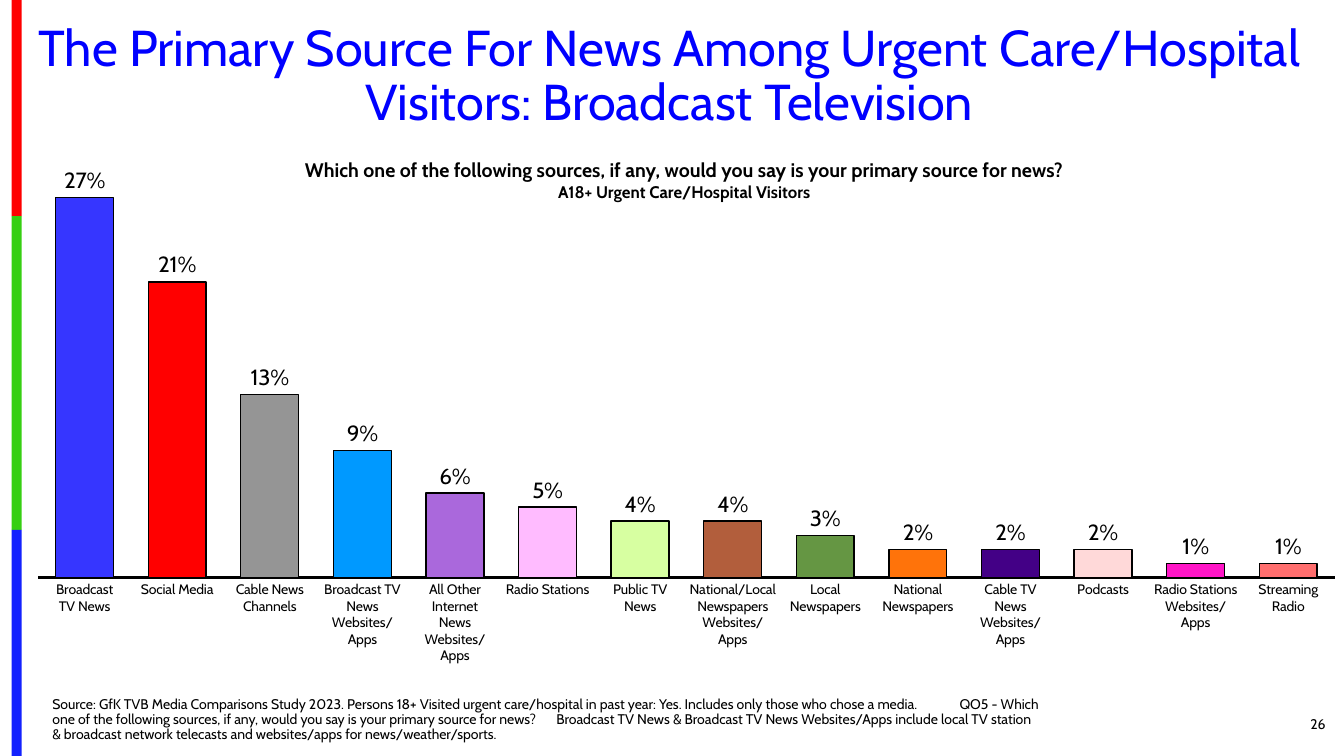
from lxml import etree
from pptx import Presentation
from pptx import util as u
from pptx.chart.data import CategoryChartData
from pptx.dml.color import RGBColor
from pptx.enum import chart as charts, shapes, text
from pptx.oxml import parse_xml
from pptx.oxml import ns

Pt = u.Pt
BLACK = RGBColor(0x00, 0x00, 0x00)
TITLE_BLUE = RGBColor(0x00, 0x00, 0xFF)
STRIPE_RED = RGBColor(0xFE, 0x00, 0x00)
STRIPE_GREEN = RGBColor(0x36, 0xCF, 0x12)
STRIPE_BLUE = RGBColor(0x13, 0x22, 0xFE)

# Category, share, bar colour
SOURCES = [
    ("Broadcast\nTV News", 0.27, RGBColor(0x36, 0x36, 0xFF)),
    ("Social Media", 0.21, RGBColor(0xFF, 0x00, 0x00)),
    ("Cable News Channels", 0.13, RGBColor(0x95, 0x95, 0x95)),
    ("Broadcast TV News Websites/Apps", 0.09, RGBColor(0x00, 0x99, 0xFF)),
    ("All Other Internet\nNews\nWebsites/Apps", 0.06, RGBColor(0xAA, 0x68, 0xDC)),
    ("Radio Stations", 0.05, RGBColor(0xFF, 0xBB, 0xFF)),
    ("Public TV News", 0.04, RGBColor(0xD7, 0xFF, 0xA1)),
    ("National/Local Newspapers Websites/Apps", 0.04, RGBColor(0xB2, 0x5E, 0x3C)),
    ("Local Newspapers", 0.03, RGBColor(0x65, 0x96, 0x43)),
    ("National Newspapers", 0.02, RGBColor(0xFF, 0x73, 0x0A)),
    ("Cable TV\nNews\nWebsites/Apps", 0.02, RGBColor(0x43, 0x00, 0x86)),
    ("Podcasts", 0.02, RGBColor(0xFF, 0xD9, 0xD9)),
    ("Radio Stations Websites/Apps", 0.01, RGBColor(0xFF, 0x15, 0xC7)),
    ("Streaming Radio", 0.01, RGBColor(0xFF, 0x6E, 0x6E)),
]


def set_font(font, size, color=BLACK, bold=False):
    font.name = "Cabin"
    font.size = Pt(size)
    font.bold = bold
    font.color.rgb = color


def write(paragraph, words, size, color=BLACK, bold=False,
          align=text.PP_ALIGN.LEFT, line_spacing=1.0, tabs=()):
    """Fill a paragraph without bullet; tabs are stops in points."""
    properties = paragraph._p.get_or_add_pPr()
    properties.set("marL", "0")
    properties.set("indent", "0")
    paragraph.alignment = align
    paragraph.line_spacing = line_spacing
    paragraph.space_before = paragraph.space_after = Pt(0)
    etree.SubElement(properties, ns.qn("a:buNone"))
    if tabs:
        stops = etree.SubElement(properties, ns.qn("a:tabLst"))
        for stop in tabs:
            etree.SubElement(stops, ns.qn("a:tab"), pos=str(Pt(stop)), algn="l")
    run = paragraph.add_run()
    run.text = words
    set_font(run.font, size, color, bold)


class SlideBuilder:
    def __init__(self, slide):
        self.slide = slide

    def stripe(self, left, top, width, height, color):
        shape = self.slide.shapes.add_shape(
            shapes.MSO_SHAPE.RECTANGLE, Pt(left), Pt(top), Pt(width), Pt(height))
        shape.shadow.inherit = False
        shape.fill.solid()
        shape.fill.fore_color.rgb = color
        shape.line.fill.background()

    def frame(self, shape, anchor):
        frame = shape.text_frame
        frame.word_wrap = True
        frame.auto_size = text.MSO_AUTO_SIZE.NONE
        frame.vertical_anchor = anchor
        return frame

    def placeholder(self, index, box, words, anchor, **style):
        shape = self.slide.placeholders[index]
        shape.left, shape.top, shape.width, shape.height = map(Pt, box)
        write(self.frame(shape, anchor).paragraphs[0], words, **style)

    def text_box(self, box, lines, anchor=text.MSO_ANCHOR.TOP):
        """Add a text box; lines holds (words, style) pairs."""
        frame = self.frame(self.slide.shapes.add_textbox(*map(Pt, box)), anchor)
        for number, (words, style) in enumerate(lines):
            paragraph = frame.add_paragraph() if number else frame.paragraphs[0]
            write(paragraph, words, **style)

    def column_chart(self, box, rows, plot):
        """Add columns coloured one by one; plot holds x, y, w, h shares."""
        names, values, colors = zip(*rows)
        data = CategoryChartData(number_format="0%")
        data.categories = names
        data.add_series("Series 1", values)
        chart = self.slide.shapes.add_chart(
            charts.XL_CHART_TYPE.COLUMN_CLUSTERED, *map(Pt, box), data).chart
        set_font(chart.font, 10)
        chart.has_legend = chart.has_title = False

        axis = chart.category_axis
        axis.major_tick_mark = axis.minor_tick_mark = charts.XL_TICK_MARK.NONE
        axis.format.line.color.rgb = BLACK
        axis.format.line.width = Pt(1.5)
        set_font(axis.tick_labels.font, 10)
        values_axis = chart.value_axis
        values_axis.minimum_scale, values_axis.maximum_scale = 0, 0.3
        values_axis.has_major_gridlines = False
        values_axis.visible = False

        columns = chart.plots[0]
        columns.gap_width = 60
        columns.vary_by_categories = False
        columns.has_data_labels = True
        labels = columns.data_labels
        labels.show_value = True
        labels.number_format, labels.number_format_is_linked = "0%", False
        labels.position = charts.XL_LABEL_POSITION.OUTSIDE_END
        set_font(labels.font, 16)
        for number, color in enumerate(colors):
            bar = columns.series[0].points[number].format
            bar.fill.solid()
            bar.fill.fore_color.rgb = color
            bar.line.color.rgb = BLACK
            bar.line.width = Pt(1)
        self.place_plot(chart, plot)

    def place_plot(self, chart, plot):
        area = chart._chartSpace.chart.plotArea
        for layout in area.findall(ns.qn("c:layout")):
            area.remove(layout)
        sizes = "".join(f'<c:{key} val="{share}"/>' for key, share in zip("xywh", plot))
        area.insert(0, parse_xml(
            f'<c:layout {ns.nsdecls("c")}><c:manualLayout><c:layoutTarget val="inner"/>'
            f'<c:xMode val="edge"/><c:yMode val="edge"/>{sizes}'
            '</c:manualLayout></c:layout>'))


def main():
    presentation = Presentation()
    presentation.slide_width, presentation.slide_height = Pt(960), Pt(540)
    slide = presentation.slides.add_slide(presentation.slide_layouts[1])
    builder = SlideBuilder(slide)
    center = text.PP_ALIGN.CENTER

    edges = [0, 154.5, 378.5, 540]
    for top, bottom, color in zip(edges, edges[1:],
                                  [STRIPE_RED, STRIPE_GREEN, STRIPE_BLUE]):
        builder.stripe(8.3, top, 7.2, bottom - top, color)

    builder.column_chart((18, 48.2, 936, 426.2), SOURCES, (0.01, 0.15, 0.99, 0.72))
    builder.placeholder(
        0, (18, 12.2, 920, 85.7),
        "The Primary Source For News Among Urgent Care/Hospital Visitors: "
        "Broadcast Television",
        text.MSO_ANCHOR.MIDDLE, size=36, color=TITLE_BLUE, align=center,
        line_spacing=0.9)
    builder.placeholder(
        1, (30.2, 494, 720, 40.3),
        "Source: GfK TVB Media Comparisons Study 2023. Persons 18+ Visited urgent "
        "care/hospital in past year: Yes. Includes only those who chose a media.\t"
        "QO5 - Which one of the following sources, if any, would you say is your "
        "primary source for news?\tBroadcast TV News & Broadcast TV News "
        "Websites/Apps include local TV station & broadcast network telecasts and "
        "websites/apps for news/weather/sports.",
        text.MSO_ANCHOR.BOTTOM, size=10, line_spacing=0.9, tabs=(574, 665))
    builder.text_box((156.2, 109.4, 665.3, 38.9), [
        ("Which one of the following sources, if any, would you say is your "
         "primary source for news?", dict(size=14, bold=True, align=center)),
        ("A18+ Urgent Care/Hospital Visitors", dict(size=12, bold=True, align=center)),
    ])
    builder.text_box((876.2, 502.6, 77.8, 28.8),
                     [("26", dict(size=10, align=text.PP_ALIGN.RIGHT))],
                     text.MSO_ANCHOR.MIDDLE)
    presentation.save("out.pptx")


if __name__ == "__main__":
    main()
